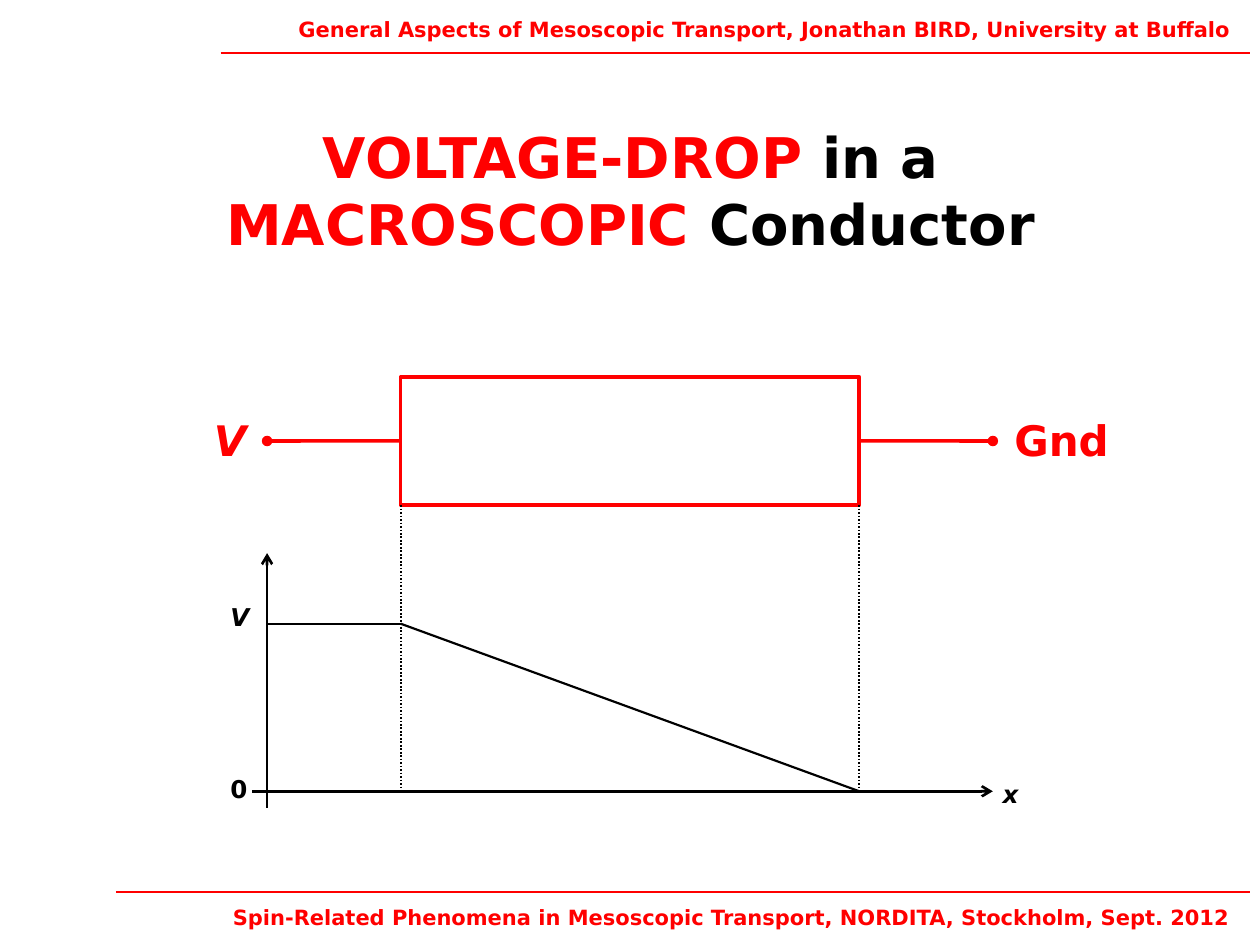
from pptx import Presentation
from pptx.dml.color import RGBColor
from pptx.enum.dml import MSO_LINE
from pptx.enum.shapes import MSO_CONNECTOR, MSO_SHAPE
from pptx.enum.text import MSO_AUTO_SIZE, PP_ALIGN
from pptx.oxml.ns import qn
from pptx.util import Inches, Pt
from lxml import etree

RED = RGBColor(0xFF, 0x00, 0x00)
BLACK = RGBColor(0x00, 0x00, 0x00)
FONT = "DejaVu Sans"
STRAIGHT = MSO_CONNECTOR.STRAIGHT
RECTANGLE = MSO_SHAPE.RECTANGLE
DOTTED = MSO_LINE.ROUND_DOT
LEFT, CENTER = PP_ALIGN.LEFT, PP_ALIGN.CENTER
FIT_SHAPE = MSO_AUTO_SIZE.SHAPE_TO_FIT_TEXT

AXIS_X, AXIS_END = 2.12, 7.88
SAMPLE_LEFT, SAMPLE_RIGHT = 3.18, 6.82
SAMPLE_TOP, SAMPLE_BOTTOM = 2.99, 4.01
LEAD_Y = (SAMPLE_TOP + SAMPLE_BOTTOM) / 2
V_LEVEL, ZERO_LEVEL = 4.95, 6.28
RULE_END = 9.92


def add_text(slide, lines, box, size=14, color=BLACK, italic=False,
             align=LEFT, wrap=False):
    label = slide.shapes.add_textbox(*map(Inches, box))
    frame = label.text_frame
    frame.word_wrap = wrap
    frame.auto_size = FIT_SHAPE
    paragraph = frame.paragraphs[0]
    paragraph.alignment = align
    paragraph.font.size = Pt(size)
    if isinstance(lines, str):
        lines = [[(lines, color)]]
    for index, line in enumerate(lines):
        if index:
            paragraph.add_line_break()
        for words, run_color in line:
            run = paragraph.add_run()
            run.text = words
            run.font.name = FONT
            run.font.size = Pt(size)
            run.font.bold = True
            run.font.italic = italic
            run.font.color.rgb = run_color


def add_line(slide, start, end, color=BLACK, width=1.25, dash=None, tip=None):
    line = slide.shapes.add_connector(STRAIGHT, *map(Inches, start + end))
    line.line.color.rgb = color
    line.line.width = Pt(width)
    if dash:
        line.line.dash_style = dash
    if tip:
        outline = line.line._get_or_add_ln()
        etree.SubElement(outline, qn("a:tailEnd"), type=tip)
    etree.SubElement(line._element.spPr, qn("a:effectLst"))
    return line


def add_header_and_footer(slide):
    add_line(slide, (0.92, 7.08), (RULE_END, 7.08), color=RED, width=1)
    add_text(slide, "Spin-Related Phenomena in Mesoscopic Transport, NORDITA, "
             "Stockholm, Sept. 2012", (1.75, 7.13, 8.2, 0.3), size=12, color=RED)
    add_line(slide, (1.75, 0.42), (RULE_END, 0.42), color=RED, width=1)
    add_text(slide, "General Aspects of Mesoscopic Transport, Jonathan BIRD, "
             "University at Buffalo", (2.27, 0.08, 7.69, 0.3), size=12, color=RED)


def add_circuit(slide):
    conductor = slide.shapes.add_shape(
        RECTANGLE, Inches(SAMPLE_LEFT), Inches(SAMPLE_TOP),
        Inches(SAMPLE_RIGHT - SAMPLE_LEFT), Inches(SAMPLE_BOTTOM - SAMPLE_TOP))
    conductor.shadow.inherit = False
    conductor.fill.background()
    conductor.line.color.rgb = RED
    conductor.line.width = Pt(2)
    for edge, terminal, side in ((SAMPLE_RIGHT, AXIS_END, 3),
                                 (SAMPLE_LEFT, AXIS_X, 1)):
        lead = add_line(slide, (edge, LEAD_Y), (terminal, LEAD_Y),
                        color=RED, width=2, tip="oval")
        lead.begin_connect(conductor, side)
    add_text(slide, "V", (1.6, 3.24, 0.56, 0.5), size=24, color=RED, italic=True)
    add_text(slide, "Gnd", (7.95, 3.24, 0.95, 0.5), size=24, color=RED, align=CENTER)


def add_voltage_graph(slide):
    add_line(slide, (AXIS_X, 6.41), (AXIS_X, 4.39), width=1.5, tip="arrow")
    add_line(slide, (2, ZERO_LEVEL), (AXIS_END, ZERO_LEVEL), width=1.5, tip="arrow")
    add_line(slide, (AXIS_X, V_LEVEL), (SAMPLE_LEFT, V_LEVEL))
    add_line(slide, (SAMPLE_LEFT, V_LEVEL), (SAMPLE_RIGHT, ZERO_LEVEL))
    for edge in (SAMPLE_LEFT, SAMPLE_RIGHT):
        add_line(slide, (edge, SAMPLE_BOTTOM), (edge, ZERO_LEVEL), width=1, dash=DOTTED)
    add_text(slide, "V", (1.73, 4.73, 0.41, 0.34), italic=True)
    add_text(slide, "x", (7.86, 6.13, 0.41, 0.34), italic=True)
    add_text(slide, "0", (1.73, 6.09, 0.34, 0.34))


def main():
    presentation = Presentation()
    presentation.slide_width = Inches(10)
    presentation.slide_height = Inches(7.5)
    slide = presentation.slides.add_slide(presentation.slide_layouts[6])
    add_header_and_footer(slide)
    title = [[("VOLTAGE-DROP ", RED), ("in a", BLACK)],
             [("MACROSCOPIC", RED), (" Conductor", BLACK)]]
    add_text(slide, title, (0.17, 0.92, 9.67, 1.18), size=32, align=CENTER, wrap=True)
    add_circuit(slide)
    add_voltage_graph(slide)
    presentation.save("out.pptx")


if __name__ == "__main__":
    main()
